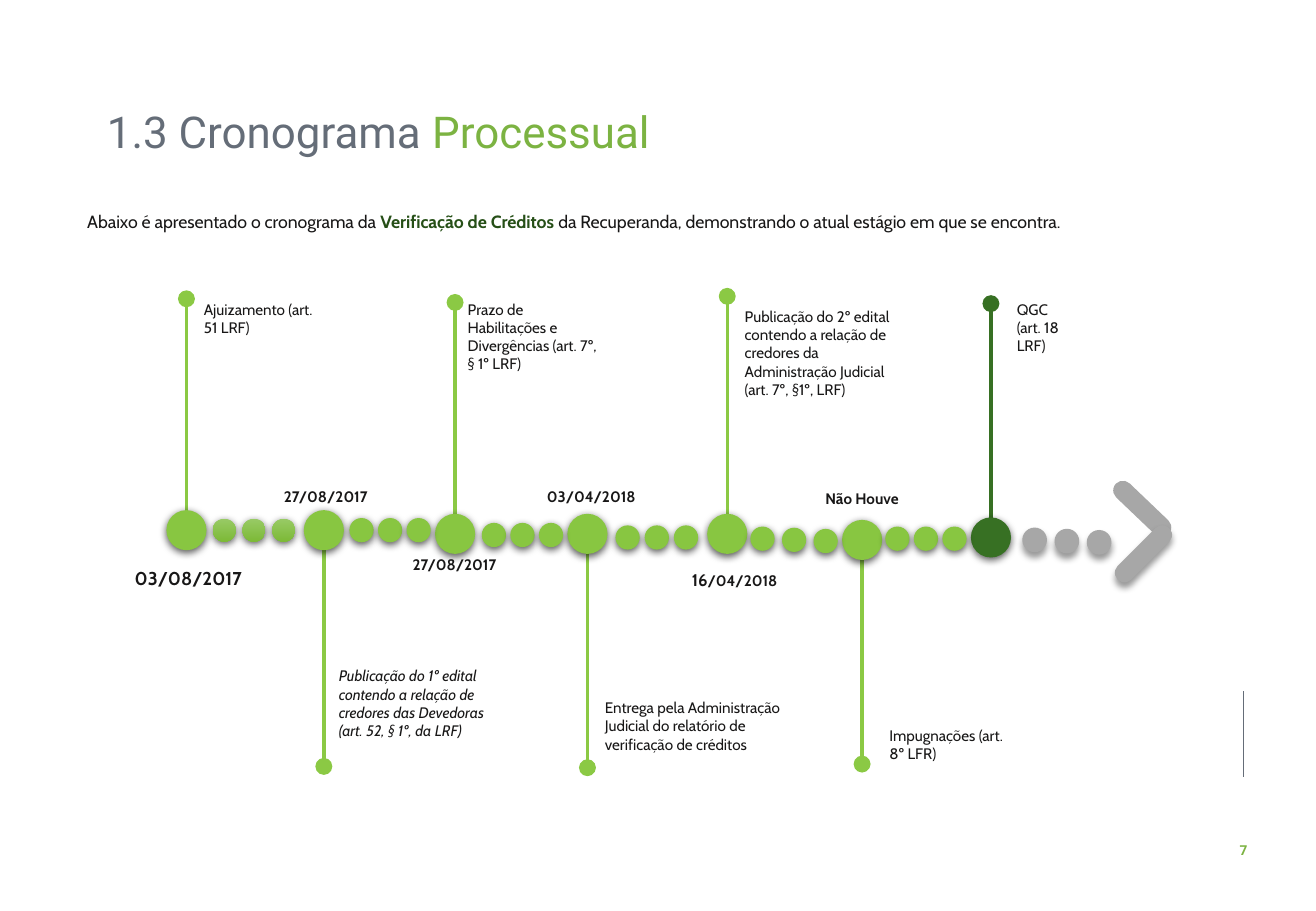
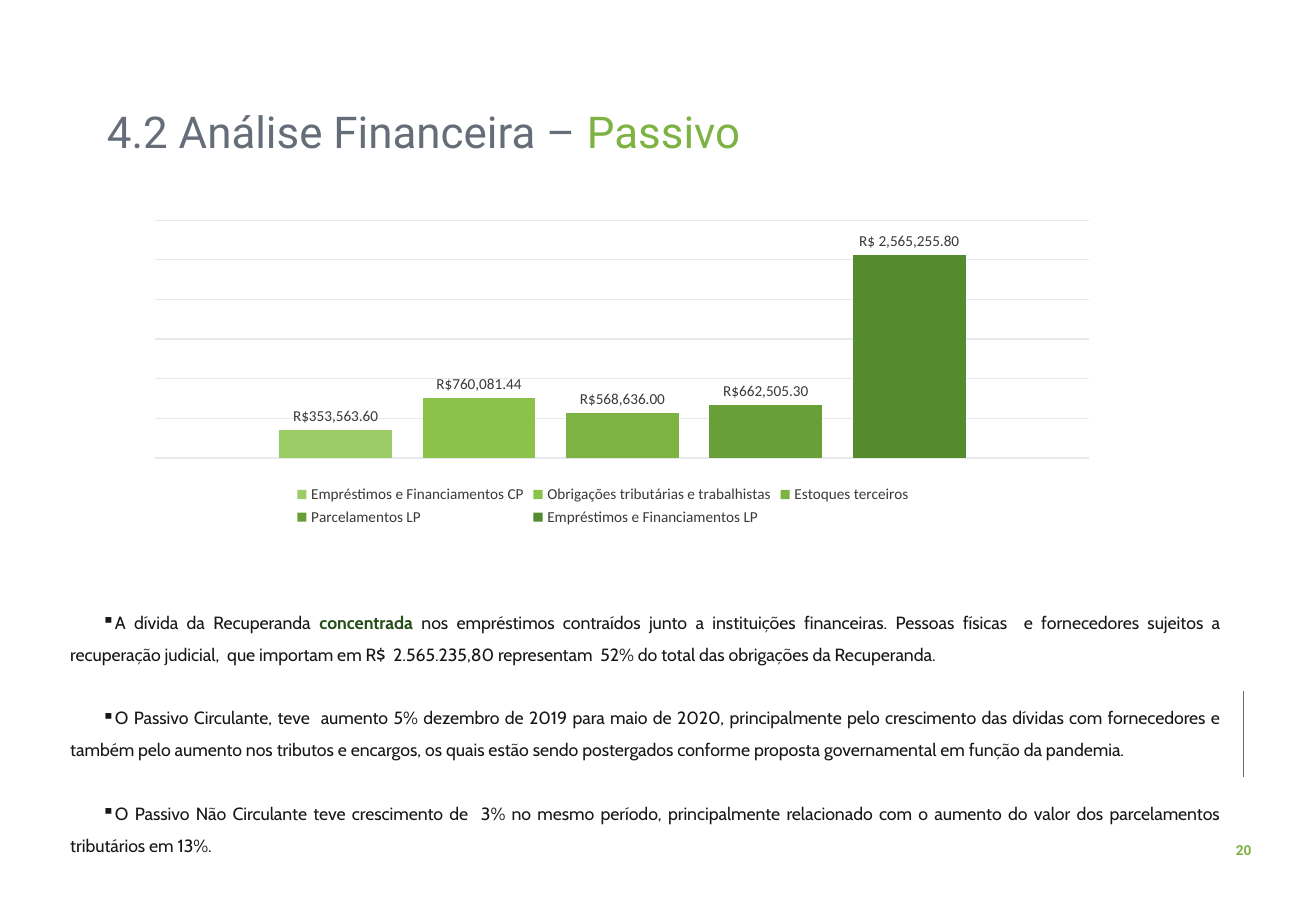
from collections import namedtuple

from lxml import etree
from pptx import Presentation
from pptx.chart.data import CategoryChartData
from pptx.dml.color import RGBColor
from pptx.enum.chart import XL_CHART_TYPE, XL_LABEL_POSITION, XL_LEGEND_POSITION
from pptx.enum.shapes import MSO_CONNECTOR, MSO_SHAPE
from pptx.enum.text import MSO_ANCHOR, MSO_AUTO_SIZE, PP_ALIGN
from pptx.oxml import parse_xml
from pptx.oxml.ns import nsdecls, qn
from pptx.util import Inches, Pt

LEFT, CENTER, JUSTIFY = PP_ALIGN.LEFT, PP_ALIGN.CENTER, PP_ALIGN.JUSTIFY
OVAL, ROUNDED = MSO_SHAPE.OVAL, MSO_SHAPE.ROUNDED_RECTANGLE
STRAIGHT = MSO_CONNECTOR.STRAIGHT
COLUMNS = XL_CHART_TYPE.COLUMN_CLUSTERED
OUTSIDE_END = XL_LABEL_POSITION.OUTSIDE_END
BOTTOM = XL_LEGEND_POSITION.BOTTOM

# Places and sizes are percentages of the slide's width and height
WIDTH, HEIGHT = Inches(10.83), Inches(7.5)
BIG_DOT, SMALL_DOT = 3.05, 1.75
DATE_WIDTH, DATE_HEIGHT = 12, 3.33

COLORS = {
    "slate": "656D78", "title_green": "7CB342", "ink": "181717",
    "emphasis": "264F17", "pin": "8BC944", "dot": "88C641",
    "dark": "377023", "grey": "A7A7A7", "grid": "E7E9EB", "label": "3B3838",
    "dot_light": "98CA65", "dot_deep": "7CB936",
}
EMPHASIS = {"color": "emphasis", "bold": True}

# Shadow: blur and distance in points, opacity in percent
GREEN_SHADOW, GREY_SHADOW = (4.5, 1.5, 63), (4, 3, 40)

Milestone = namedtuple("Milestone", "x y pin_y color label area date date_x date_y date_size")
Trail = namedtuple("Trail", "x y step drop color")

MILESTONES = [
    Milestone(14.17, 58.2, 32.8, "pin", ["Ajuizamento (art. 51 LRF)"],
              (14.59, 32.27, 10.34, 5.33), ["03/08/2017"], 14.31, 61.6, 11),
    Milestone(24.61, 58.2, 84.13, "pin",
              [[("Publicação do 1º edital contendo a relação de credores das "
                 "Devedoras (art. 52, § 1º, da LRF)", {"italic": True})]],
              (24.84, 72.53, 13.2, 9.47), ["27/08/2017"], 24.75, 52.8, 9),
    Milestone(34.58, 58.6, 33.2, "pin",
              ["Prazo de Habilitações e Divergências (art. 7º, § 1º LRF)"],
              (34.63, 32.27, 12, 7.47), ["27/08/2017"], 34.53, 60.27, 9),
    Milestone(44.64, 58.6, 84.27, "pin",
              ["Entrega pela Administração Judicial do relatório de verificação de créditos"],
              (45.06, 76, 16.44, 7.47), ["03/04/2018"], 44.92, 52.8, 9),
    Milestone(55.26, 58.6, 32.53, "pin",
              ["Publicação do 2º edital contendo a relação de credores da "
               "Administração Judicial (art. 7º, §1º, LRF)"],
              (55.68, 33.07, 14.5, 9.47),
              [[("16", {"size": 10}), "/04/2018"]], 55.82, 61.87, 9),
    Milestone(65.51, 59.27, 83.87, "pin", ["Impugnações (art. 8º LFR)"],
              (66.67, 79.07, 11.45, 5.33), ["Não Houve"], 65.5, 53.07, 9),
    Milestone(75.3, 59, 33.33, "dark", ["QGC", "(art. 18 LRF)"],
              (76.36, 32.27, 6.65, 7.47), None, 0, 0, 0),
]

TRAILS = [
    Trail(17.04, 58.2, 2.26, 0, "gradient"),
    Trail(27.47, 58.2, 2.17, 0, "dot"),
    Trail(37.53, 58.73, 2.17, 0, "dot"),
    Trail(47.69, 59, 2.22, 0, "dot"),
    Trail(57.94, 59.13, 2.4, 0.13, "dot"),
    Trail(68.19, 59.13, 2.17, 0, "dot"),
    Trail(78.62, 59.27, 2.45, 0.13, "grey"),
]

DEBTS = [
    ("Empréstimos e Financiamentos CP", 353563.6, "9CCC65"),
    ("Obrigações tributárias e trabalhistas", 760081.44, "8BC34A"),
    ("Estoques terceiros", 568636, "7CB342"),
    ("Parcelamentos LP", 662505.3, "689F38"),
    ("Empréstimos e Financiamentos LP", 2565255.8, "558B2F"),
]

FINDINGS = [
    ["A dívida da Recuperanda ", ("concentrada", EMPHASIS),
     " nos empréstimos contraídos junto a instituições financeiras. Pessoas físicas  e "
     "fornecedores sujeitos a recuperação judicial,  que importam em R$  2.565.235,80 "
     "representam  52% do total das obrigações da Recuperanda."],
    "O Passivo Circulante, teve  aumento 5% dezembro de 2019 para maio de 2020, "
    "principalmente pelo crescimento das dívidas com fornecedores e também pelo aumento "
    "nos tributos e encargos, os quais estão sendo postergados conforme proposta "
    "governamental em função da pandemia.",
    "O Passivo Não Circulante teve crescimento de  3% no mesmo período, principalmente "
    "relacionado com o aumento do valor dos parcelamentos tributários em 13%.",
]


# Helpers for measures and colours
def across(share):
    return round(WIDTH * share / 100)


def down(share):
    return round(HEIGHT * share / 100)


def place(area):
    left, top, width, height = area
    return across(left), down(top), across(width), down(height)


def rgb(name):
    return RGBColor.from_string(COLORS.get(name, name))


def set_font(font, name, size, color, bold=False, italic=False):
    font.name, font.size = name, Pt(size)
    font.bold, font.italic = bold, italic
    font.color.rgb = rgb(color)


# Text
def write_text(frame, paragraphs, font="Cabin", size=9, color="ink", bold=False,
               align=LEFT, spacing=1.0, indent=0, bullet=None, gap=0):
    """Each paragraph is a string or a list of strings and (string, format) spans."""
    for index, spans in enumerate(paragraphs):
        para = frame.add_paragraph() if index else frame.paragraphs[0]
        para.alignment, para.line_spacing = align, spacing
        para.space_before = Pt(gap if index else 0)
        properties = para._p.get_or_add_pPr()
        properties.set("marL", "0")
        properties.set("indent", str(across(indent)))
        if bullet:
            etree.SubElement(properties, qn("a:buChar")).set("char", bullet)
        for span in [spans] if isinstance(spans, str) else spans:
            text, changes = (span, {}) if isinstance(span, str) else span
            run = para.add_run()
            run.text = text
            style = {"name": font, "size": size, "color": color, "bold": bold}
            set_font(run.font, **{**style, **changes})


def add_text(page, area, paragraphs, **style):
    frame = page.shapes.add_textbox(*place(area)).text_frame
    frame.word_wrap = True
    write_text(frame, paragraphs, **style)


# Lines and shapes
def add_line(page, start, end, color, width, oval_start=False):
    line = page.shapes.add_connector(
        STRAIGHT, across(start[0]), down(start[1]), across(end[0]), down(end[1]))
    line.line.color.rgb = rgb(color)
    line.line.width = Pt(width)
    if oval_start:
        head = etree.SubElement(line.line._get_or_add_ln(), qn("a:headEnd"))
        for key, value in (("type", "oval"), ("w", "lg"), ("len", "lg")):
            head.set(key, value)
    etree.SubElement(line._element.spPr, qn("a:effectLst"))


def add_shadow(shape, blur, distance, opacity):
    effects = shape._element.spPr.find(qn("a:effectLst"))
    effects.append(parse_xml(
        f'<a:outerShdw {nsdecls("a")} blurRad="{Pt(blur)}" dist="{Pt(distance)}" '
        f'dir="5400000" rotWithShape="0"><a:srgbClr val="000000">'
        f'<a:alpha val="{opacity * 1000}"/></a:srgbClr></a:outerShdw>'))


def add_solid(page, kind, box, color, outline=0, shadow=None):
    shape = page.shapes.add_shape(kind, *box)
    shape.shadow.inherit = False
    if color == "gradient":
        shape.fill.gradient()
        shape.fill.gradient_angle = 270
        for stop, name in zip(shape.fill.gradient_stops, ("dot_light", "dot_deep")):
            stop.color.rgb = rgb(name)
    else:
        shape.fill.solid()
        shape.fill.fore_color.rgb = rgb(color)
    if outline:
        shape.line.color.rgb = rgb(color)
        shape.line.width = Pt(outline)
    else:
        shape.line.fill.background()
    if shadow:
        add_shadow(shape, *shadow)
    return shape


def add_dot(page, x, y, diameter, color, **style):
    size = across(diameter)
    box = (across(x) - size // 2, down(y) - size // 2, size, size)
    add_solid(page, OVAL, box, color, **style)


# Parts that both slides share
def add_page(deck, number, title, highlight):
    page = deck.slides.add_slide(deck.slide_layouts[5])
    heading = page.shapes.title
    heading.left, heading.top, heading.width, heading.height = place((7.2, 11.47, 75.53, 7.07))
    frame = heading.text_frame
    frame.auto_size, frame.vertical_anchor = MSO_AUTO_SIZE.NONE, MSO_ANCHOR.TOP
    write_text(frame, [[title, (highlight, {"color": "title_green"})]],
               font="Roboto", size=26, color="slate", spacing=0.9)
    add_line(page, (94.46, 75.87), (94.46, 85.33), "slate", 0.5)
    add_text(page, (92, 91.73, 5, 3.2), [number], font="Roboto", size=8.1,
             color="title_green", bold=True, align=CENTER)
    return page


# Timeline
def add_timeline(page):
    for stage in MILESTONES:
        add_line(page, (stage.x, stage.pin_y), (stage.x, stage.y), stage.color, 2, oval_start=True)
        add_text(page, stage.area, stage.label)
        if stage.date:
            add_text(page, (stage.date_x - DATE_WIDTH / 2, stage.date_y, DATE_WIDTH, DATE_HEIGHT),
                     stage.date, size=stage.date_size, bold=True, align=CENTER)
    for stage in MILESTONES:
        color = "dot" if stage.color == "pin" else stage.color
        add_dot(page, stage.x, stage.y, BIG_DOT, color, shadow=GREEN_SHADOW)
    for trail in TRAILS:
        grey = trail.color == "grey"
        outline = {"grey": 1, "gradient": 0}.get(trail.color, 0.75)
        for index in range(3):
            add_dot(page, trail.x + index * trail.step, trail.y + index * trail.drop,
                    SMALL_DOT, trail.color, outline=outline,
                    shadow=GREY_SHADOW if grey else GREEN_SHADOW)
    # Arrow tip made of two rounded bars
    for left, top, angle, shadow in ((84.03, 54.8, 43.7, None), (84.12, 59.73, 315, GREY_SHADOW)):
        bar = add_solid(page, ROUNDED, place((left, top, 5.54, 2.13)), "grey", shadow=shadow)
        bar.adjustments[0] = 0.5
        bar.rotation = angle


# Chart
def set_plot_layout(chart, **shares):
    plot_area = chart._chartSpace.chart.plotArea
    for old in plot_area.findall(qn("c:layout")):
        plot_area.remove(old)
    sizes = "".join(f'<c:{key} val="{value}"/>' for key, value in shares.items())
    plot_area.insert(0, parse_xml(
        f'<c:layout {nsdecls("c")}><c:manualLayout><c:layoutTarget val="inner"/>'
        f'<c:xMode val="edge"/><c:yMode val="edge"/>{sizes}</c:manualLayout></c:layout>'))


def add_debt_chart(page, area):
    data = CategoryChartData()
    data.categories = ["1"]
    for name, value, _ in DEBTS:
        data.add_series(name, [value])
    chart = page.shapes.add_chart(COLUMNS, *place(area), data).chart
    set_font(chart.font, "Calibri", 10, "slate")
    chart.has_title = False
    chart.has_legend = True
    chart.legend.position, chart.legend.include_in_layout = BOTTOM, False
    set_font(chart.legend.font, "Calibri", 9, "label")

    chart.category_axis.visible = False
    axis = chart.value_axis
    axis.visible = False
    axis.minimum_scale, axis.maximum_scale, axis.major_unit = 0, 3000000, 500000
    axis.has_major_gridlines = True
    axis.major_gridlines.format.line.color.rgb = rgb("grid")
    axis.major_gridlines.format.line.width = Pt(0.75)

    plot = chart.plots[0]
    plot.gap_width, plot.overlap, plot.vary_by_categories = 219, -27, False
    for series, (name, _, color) in zip(plot.series, DEBTS):
        series.format.fill.solid()
        series.format.fill.fore_color.rgb = rgb(color)
        labels = series.data_labels
        labels.show_value, labels.position = True, OUTSIDE_END
        labels.number_format_is_linked = False
        labels.number_format = r'"R$"\ #,##0.00' if name == DEBTS[-1][0] else '"R$"#,##0.00'
        set_font(labels.font, "Calibri", 9, "label")
    set_plot_layout(chart, x=0.04, y=0.06, w=0.96, h=0.72)


def main():
    deck = Presentation()
    deck.slide_width, deck.slide_height = WIDTH, HEIGHT

    schedule = add_page(deck, "7", "1.3 Cronograma ", "Processual")
    add_text(schedule, (2.86, 22.13, 93.9, 4),
             [["Abaixo é apresentado o cronograma da ", ("Verificação de Créditos ", EMPHASIS),
               "da Recuperanda, demonstrando o atual estágio em que se encontra."]],
             size=10.5, align=JUSTIFY, spacing=1.14, indent=2.86)
    add_timeline(schedule)

    liabilities = add_page(deck, "20", "4.2 Análise Financeira – ", "Passivo")
    add_debt_chart(liabilities, (8.86, 22, 73.96, 36.27))
    add_text(liabilities, (4.43, 65.33, 89.29, 29.6), FINDINGS, size=10.5,
             align=JUSTIFY, spacing=1.5, indent=2.4, bullet="▪", gap=18.9)

    deck.save("out.pptx")


if __name__ == "__main__":
    main()
